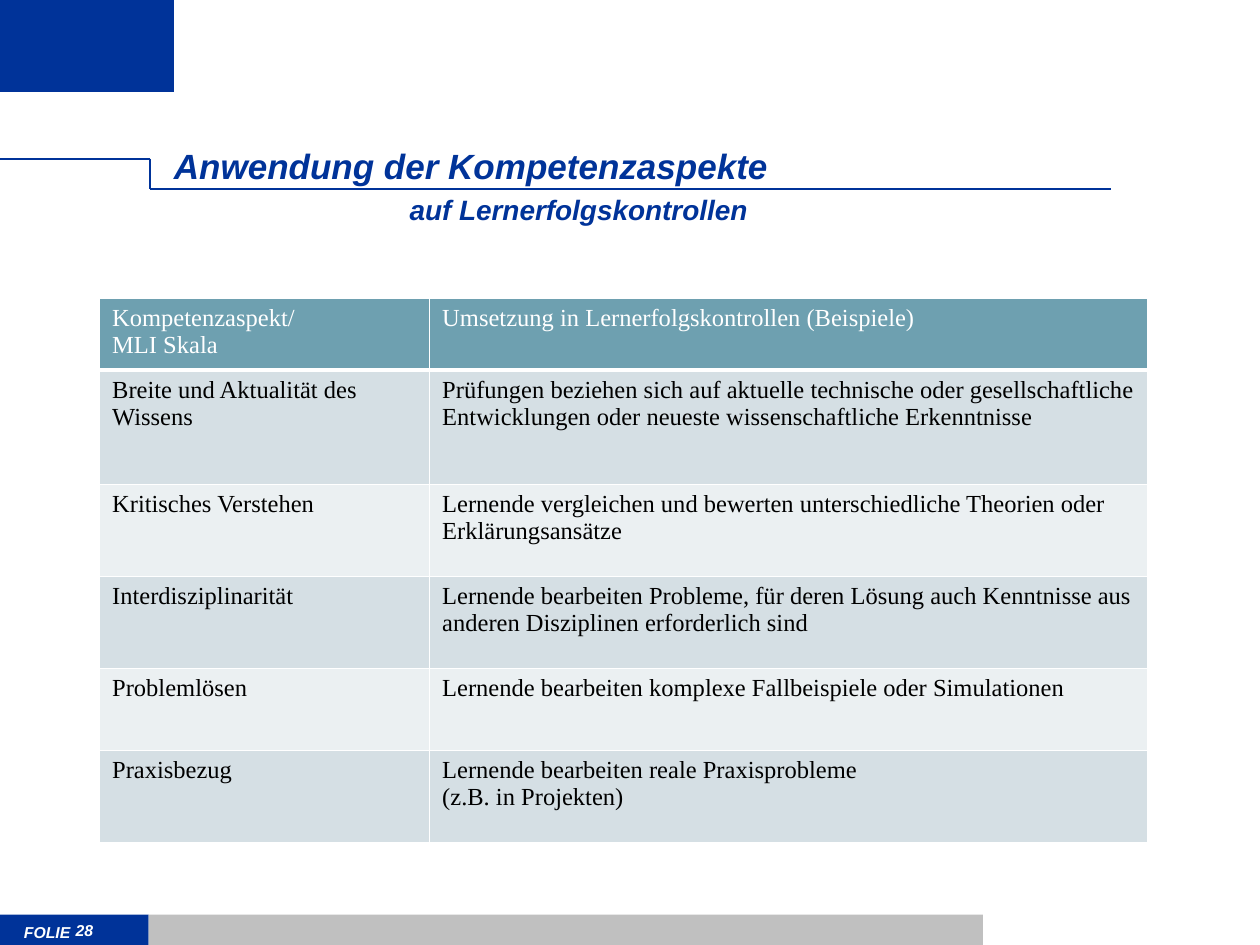
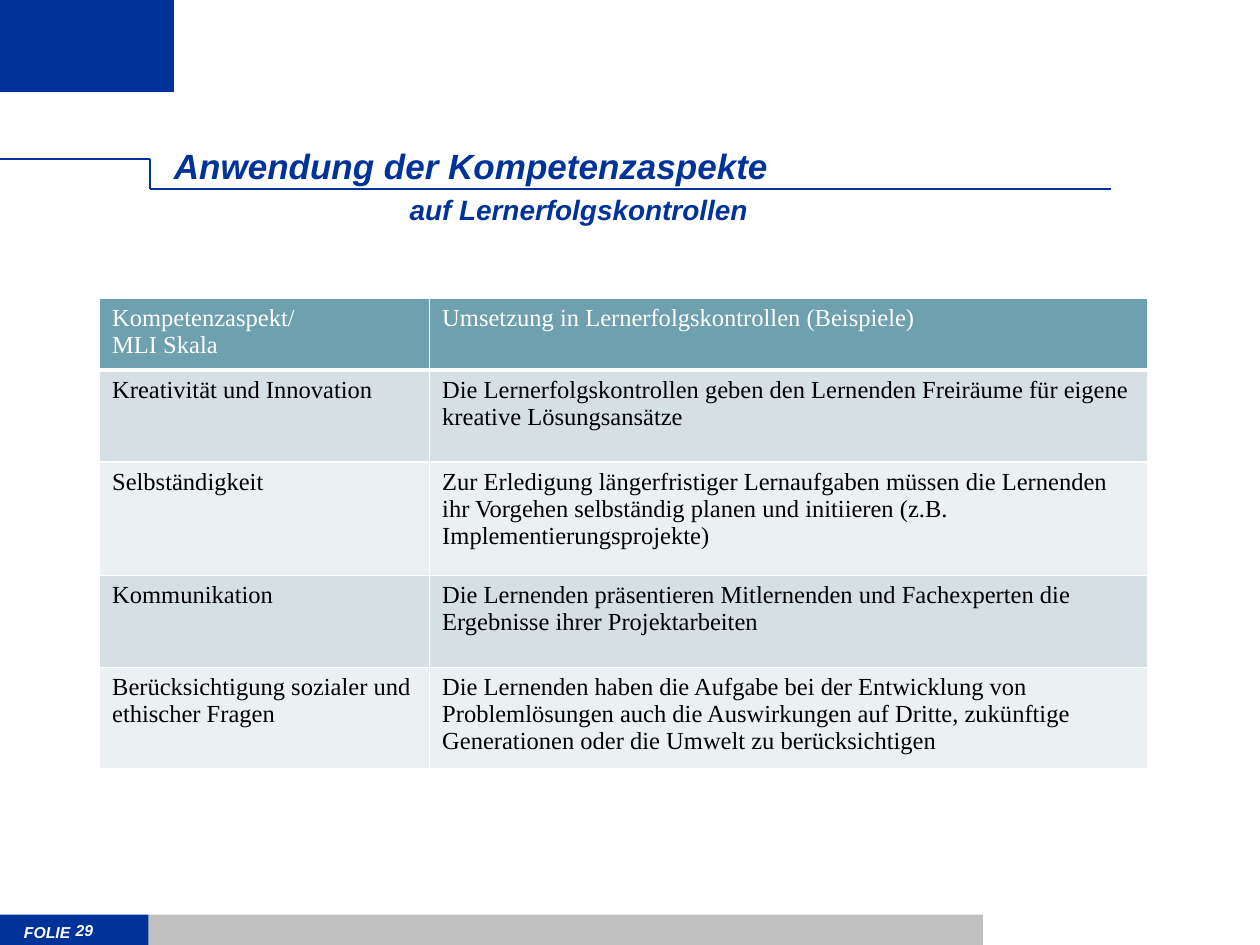
from lxml import etree
from pptx import Presentation
from pptx import util as u
from pptx.dml.color import RGBColor
from pptx.enum import shapes, text
from pptx.oxml import ns

BLUE, GREY, WHITE, BLACK = "003399", "C0C0C0", "FFFFFF", "000000"
HEADER_FILL, BAND_FILLS = "6EA0B0", ("D5DFE4", "EBF0F2")
HEADING_FONT, TABLE_FONT = "Arial", "Times New Roman"
TOP, BOTTOM = text.MSO_ANCHOR.TOP, text.MSO_ANCHOR.BOTTOM

TITLE = "Anwendung der Kompetenzaspekte"
SUBTITLE = "auf Lernerfolgskontrollen"
TABLE_BOX = (0.79, 2.37)
COLUMN_WIDTHS = (2.62, 5.7)
HEADER_HEIGHT = 0.56
HEADER = ("Kompetenzaspekt/\nMLI Skala",
          "Umsetzung in Lernerfolgskontrollen (Beispiele)")

# Page number -> rows of (height, aspect, example)
PAGES = {
    28: [
        (0.91, "Breite und Aktualität des Wissens",
         "Prüfungen beziehen sich auf aktuelle technische oder gesellschaftliche "
         "Entwicklungen oder neueste wissenschaftliche Erkenntnisse"),
        (0.73, "Kritisches Verstehen",
         "Lernende vergleichen und bewerten unterschiedliche Theorien oder "
         "Erklärungsansätze"),
        (0.73, "Interdisziplinarität",
         "Lernende bearbeiten Probleme, für deren Lösung auch Kenntnisse aus "
         "anderen Disziplinen erforderlich sind"),
        (0.65, "Problemlösen",
         "Lernende bearbeiten komplexe Fallbeispiele oder Simulationen"),
        (0.73, "Praxisbezug",
         "Lernende bearbeiten reale Praxisprobleme\n(z.B. in Projekten)"),
    ],
    29: [
        (0.73, "Kreativität und Innovation",
         "Die Lernerfolgskontrollen geben den Lernenden Freiräume für eigene "
         "kreative Lösungsansätze"),
        (0.9, "Selbständigkeit",
         "Zur Erledigung längerfristiger Lernaufgaben müssen die Lernenden ihr "
         "Vorgehen selbständig planen und initiieren (z.B. "
         "Implementierungsprojekte)"),
        (0.73, "Kommunikation",
         "Die Lernenden präsentieren Mitlernenden und Fachexperten die "
         "Ergebnisse ihrer Projektarbeiten"),
        (0.8, "Berücksichtigung sozialer und ethischer Fragen",
         "Die Lernenden haben die Aufgabe bei der Entwicklung von "
         "Problemlösungen auch die Auswirkungen auf Dritte, zukünftige "
         "Generationen oder die Umwelt zu berücksichtigen"),
    ],
}


def color(value):
    return RGBColor.from_string(value)


def write(frame, words, size, fill, font=HEADING_FONT, strong=True):
    """Fill the first paragraph; a newline becomes a line break."""
    para = frame.paragraphs[0]
    for number, line in enumerate(words.split("\n")):
        if number:
            para.add_line_break()
        span = para.add_run()
        span.text = line
        span.font.name = font
        span.font.size = u.Pt(size)
        span.font.bold = span.font.italic = strong
        span.font.color.rgb = color(fill)


def add_text(page, box, words, size, fill, anchor=TOP):
    frame = page.shapes.add_textbox(*map(u.Inches, box)).text_frame
    frame.word_wrap = True
    frame.vertical_anchor = anchor
    frame.margin_left = frame.margin_right = 0
    frame.margin_top = frame.margin_bottom = 0
    write(frame, words, size, fill)


def add_block(page, box, fill):
    block = page.shapes.add_shape(shapes.MSO_SHAPE.RECTANGLE, *map(u.Inches, box))
    block.shadow.inherit = False
    block.fill.solid()
    block.fill.fore_color.rgb = color(fill)
    block.line.fill.background()


def add_rule(page, start, end):
    rule = page.shapes.add_connector(
        shapes.MSO_CONNECTOR.STRAIGHT, *map(u.Inches, start + end))
    rule.line.color.rgb = color(BLUE)
    rule.line.width = u.Pt(1)
    etree.SubElement(rule._element.spPr, ns.qn("a:effectLst"))


def add_heading(page):
    add_block(page, (0, 0, 1.38, 0.73), BLUE)
    # Stepped rule under the title
    corners = [(0, 1.26), (1.19, 1.26), (1.19, 1.5), (8.82, 1.5)]
    for start, end in zip(corners, corners[1:]):
        add_rule(page, start, end)
    add_text(page, (1.38, 0.73, 8.5, 0.75), TITLE, 20, BLUE, BOTTOM)
    add_text(page, (3.25, 1.53, 6.29, 0.27), SUBTITLE, 16, BLUE)


def add_footer(page, number, top=7.26, height=0.24, split=1.18):
    add_block(page, (0, top, split, height), BLUE)
    add_block(page, (split, top, 6.62, height), GREY)
    add_text(page, (0.19, top + 0.06, 0.4, 0.15), "FOLIE", 9, WHITE, BOTTOM)
    add_text(page, (0.6, top - 0.15, 0.41, 0.35), str(number), 9, WHITE, BOTTOM)


def set_borders(cell, bottom):
    """Draw white borders, which precede the fill in the cell's XML."""
    properties = cell._tc.get_or_add_tcPr()
    widths = {"lnL": 1, "lnR": 1, "lnT": 1, "lnB": bottom}
    for place, (side, width) in enumerate(widths.items()):
        border = etree.Element(ns.qn("a:" + side), w=str(u.Pt(width)))
        fill = etree.SubElement(border, ns.qn("a:solidFill"))
        etree.SubElement(fill, ns.qn("a:srgbClr"), val=WHITE)
        properties.insert(place, border)


def add_aspect_table(page, box, entries):
    rows = [(HEADER_HEIGHT, *HEADER), *entries]
    size = (sum(COLUMN_WIDTHS), sum(row[0] for row in rows))
    table = page.shapes.add_table(
        len(rows), len(COLUMN_WIDTHS), *map(u.Inches, box + size)).table
    for column, width in zip(table.columns, COLUMN_WIDTHS):
        column.width = u.Inches(width)
    for index, (height, *words) in enumerate(rows):
        table.rows[index].height = u.Inches(height)
        is_header = index == 0
        for cell, content in zip(table.rows[index].cells, words):
            cell.fill.solid()
            cell.fill.fore_color.rgb = color(
                HEADER_FILL if is_header else BAND_FILLS[(index - 1) % 2])
            set_borders(cell, bottom=3 if is_header else 1)
            write(cell.text_frame, content, 14, WHITE if is_header else BLACK,
                  font=TABLE_FONT, strong=False)


def main():
    deck = Presentation()
    deck.slide_width, deck.slide_height = u.Inches(10), u.Inches(7.5)
    for number, entries in PAGES.items():
        page = deck.slides.add_slide(deck.slide_layouts[6])
        add_heading(page)
        add_aspect_table(page, TABLE_BOX, entries)
        add_footer(page, number)
    deck.save("out.pptx")


if __name__ == "__main__":
    main()
